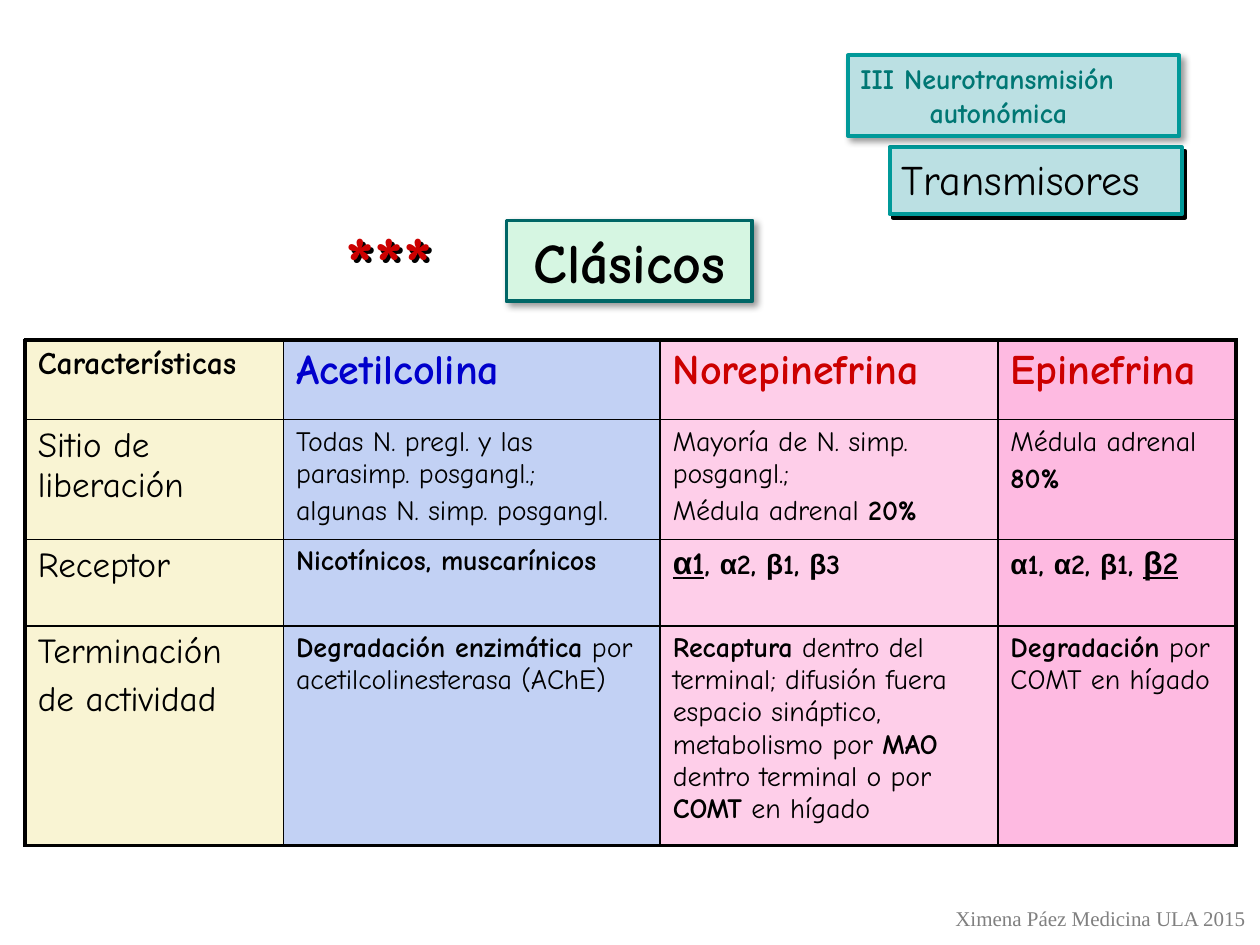
from itertools import groupby
from lxml import etree
from pptx import Presentation
from pptx.dml.color import RGBColor
from pptx.enum.shapes import MSO_SHAPE
from pptx.enum.text import MSO_ANCHOR, PP_ALIGN
from pptx.oxml.ns import qn
from pptx.util import Inches, Pt

RECT = MSO_SHAPE.RECTANGLE
TOP, MIDDLE = MSO_ANCHOR.TOP, MSO_ANCHOR.MIDDLE
LEFT, CENTER = PP_ALIGN.LEFT, PP_ALIGN.CENTER

BLACK = RGBColor(0, 0, 0)
GRAY = RGBColor(0x80, 0x80, 0x80)
RED = RGBColor(0xCC, 0, 0)
BLUE = RGBColor(0, 0, 0xCC)
TEAL = RGBColor(0, 0x99, 0x99)
DARK = RGBColor(0, 0x66, 0x66)
DEEP = RGBColor(0, 0x77, 0x74)
AQUA = RGBColor(0xBB, 0xE0, 0xE3)
MINT = RGBColor(0xD6, 0xF6, 0xE2)
CREAM = RGBColor(0xF9, 0xF4, 0xD3)
SKY = RGBColor(0xC2, 0xD1, 0xF4)
ROSE = RGBColor(0xFE, 0xCE, 0xE9)
PINK = RGBColor(0xFE, 0xBA, 0xE1)

COMIC = "Comic Neue"
COLS = (2.05, 2.99, 2.68, 1.89)
ROWS = (0.63, 0.95, 0.69, 1.74)
FILLS = (CREAM, SKY, ROSE, PINK)
HEADS = (BLACK, BLUE, RED, RED)
CELLS = (
    ("|Características", "|Acetilcolina", "|Norepinefrina", "|Epinefrina"),
    ("Sitio de liberación",
     "Todas N. pregl. y las parasimp. posgangl.;\nalgunas N. simp. posgangl.",
     "Mayoría de N. simp. posgangl.;\nMédula adrenal |20%",
     "Médula adrenal\n|80%"),
    ("Receptor", "|Nicotínicos, muscarínicos",
     "|_α1_, α2, β1, β3", "|α1, α2, β1, _β2"),
    ("Terminación\nde actividad",
     "|Degradación enzimática| por acetilcolinesterasa (AChE)",
     "|Recaptura| dentro del terminal; difusión fuera espacio sináptico, "
     "metabolismo por |MAO| dentro terminal o por |COMT| en hígado",
     "|Degradación| por COMT en hígado"),
)


def is_greek(char):
    return char in "αβ"


def write(frame, text, size=16, font=COMIC, color=BLACK, align=LEFT, gap=0):
    for i, line in enumerate(text.split("\n")):
        para = frame.add_paragraph() if i else frame.paragraphs[0]
        para.alignment = align
        para.space_before = Pt(size * gap)
        for b, part in enumerate(line.split("|")):
            for u, piece in enumerate(part.split("_")):
                for greek, chars in groupby(piece, is_greek):
                    run = para.add_run()
                    run.text = "".join(chars)
                    face = run.font
                    face.name = "Arial" if greek else font
                    face.size = Pt(18 if u % 2 else size)
                    face.bold = b % 2 == 1
                    face.underline = u % 2 == 1
                    face.color.rgb = color


def place(shape, box):
    shape.left, shape.top, shape.width, shape.height = map(Inches, box)


def shade(shape, alpha=40, blur=4, dist=3):
    shape.shadow.inherit = False
    effects = shape._element.spPr.find(qn("a:effectLst"))
    outer = etree.SubElement(
        effects, qn("a:outerShdw"), blurRad=str(Pt(blur)),
        dist=str(Pt(dist)), dir="2700000", algn="tl", rotWithShape="0")
    tint = etree.SubElement(outer, qn("a:srgbClr"), val=str(BLACK))
    etree.SubElement(tint, qn("a:alpha"), val=str(alpha * 1000))


def style(shape, fill, line):
    shape.fill.solid()
    shape.fill.fore_color.rgb = fill
    shape.line.color.rgb = line
    shape.line.width = Pt(2.25)


def add_card(slide, box, text, **fmt):
    card = slide.shapes.add_shape(RECT, *map(Inches, box))
    style(card, AQUA, TEAL)
    frame = card.text_frame
    frame.word_wrap = False
    frame.vertical_anchor = TOP
    write(frame, text, **fmt)
    return card


def add_label(slide, box, text, **fmt):
    label = slide.shapes.add_textbox(*map(Inches, box))
    label.text_frame.word_wrap = False
    write(label.text_frame, text, **fmt)
    return label


def set_title(slide, box, text, **fmt):
    title = slide.shapes.title
    place(title, box)
    style(title, MINT, DARK)
    shade(title)
    title.text_frame.word_wrap = True
    title.text_frame.vertical_anchor = MIDDLE
    write(title.text_frame, text, **fmt)


def set_edges(cell, row, col):
    edges = (("L", col == 0), ("R", col == len(COLS) - 1),
             ("T", row == 0), ("B", row == len(ROWS) - 1))
    props = cell._tc.get_or_add_tcPr()
    for i, (side, outer) in enumerate(edges):
        line = etree.Element(qn("a:ln" + side), w=str(Pt(2.25 if outer else 1)))
        fill = etree.SubElement(line, qn("a:solidFill"))
        etree.SubElement(fill, qn("a:srgbClr"), val=str(BLACK))
        props.insert(i, line)


def text_size(row, col):
    if row == 0:
        return 24 if col else 18
    return 16 if col else 20


def add_grid(slide, left, top):
    box = map(Inches, (left, top, sum(COLS), sum(ROWS)))
    table = slide.shapes.add_table(len(ROWS), len(COLS), *box).table
    table.first_row = table.horz_banding = False
    for col, width in enumerate(COLS):
        table.columns[col].width = Inches(width)
    for row, height in enumerate(ROWS):
        table.rows[row].height = Inches(height)
        for col, text in enumerate(CELLS[row]):
            cell = table.cell(row, col)
            cell.fill.solid()
            cell.fill.fore_color.rgb = FILLS[col]
            set_edges(cell, row, col)
            write(cell.text_frame, text, size=text_size(row, col),
                  color=BLACK if row else HEADS[col], gap=0.2)


def main():
    deck = Presentation()
    deck.slide_width, deck.slide_height = Inches(10), Inches(7.5)
    slide = deck.slides.add_slide(deck.slide_layouts[5])
    add_grid(slide, 0.2, 2.7)
    topic = add_card(slide, (7.06, 1.17, 2.32, 0.53), "Transmisores", size=24)
    shade(topic, alpha=100, blur=0, dist=2.8)
    stars = add_label(slide, (2.64, 1.65, 1.18, 0.84), "|***",
                      size=44, color=RED)
    shade(stars, alpha=100, blur=0, dist=2.8)
    part = add_card(slide, (6.73, 0.44, 2.63, 0.64),
                    "|III Neurotransmisión\n|autonómica", color=DEEP)
    indent = part.text_frame.paragraphs[1]._p.get_or_add_pPr()
    indent.set("marL", str(Inches(0.55)))
    shade(part)
    add_label(slide, (7.47, 7.14, 2.53, 0.3), "Ximena Páez Medicina ULA 2015",
              size=12, font="Times New Roman", color=GRAY, align=CENTER)
    set_title(slide, (4.02, 1.75, 1.95, 0.64), "|Clásicos",
              size=32, align=CENTER)
    deck.save("out.pptx")


if __name__ == "__main__":
    main()
